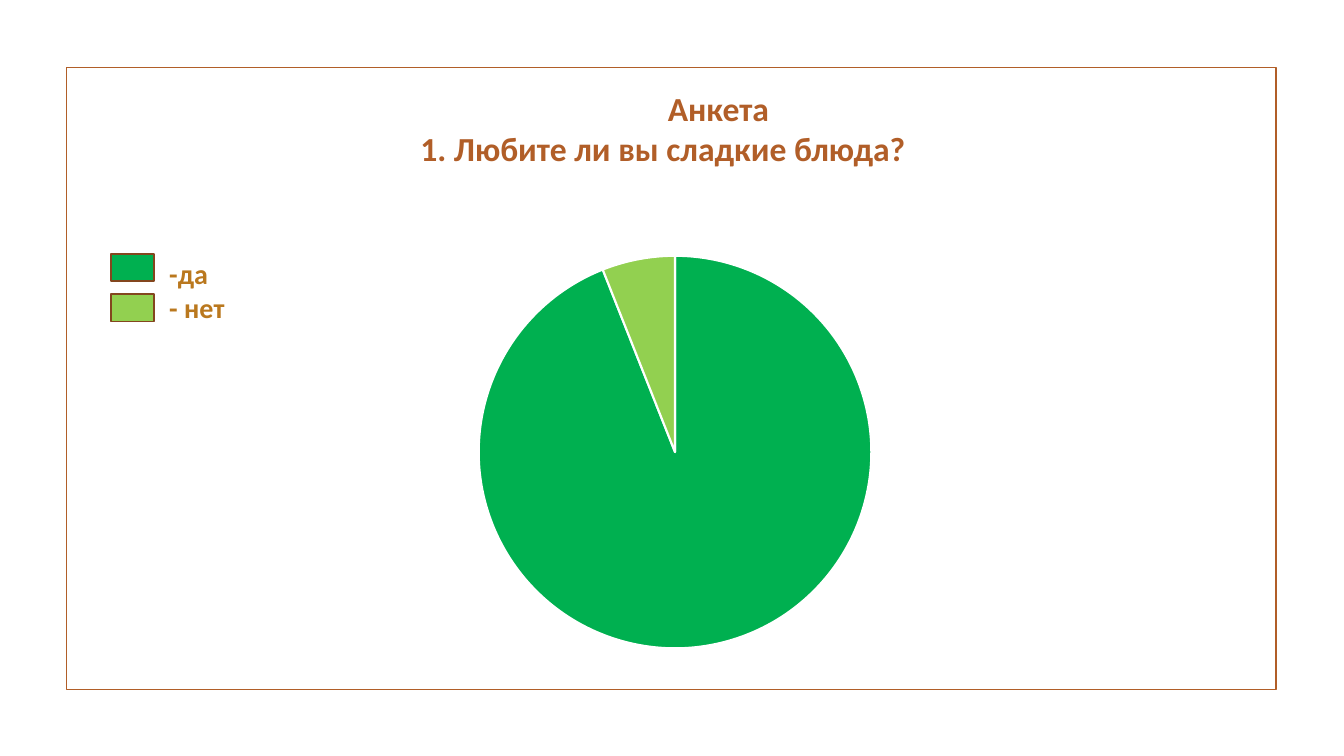
from pptx import Presentation
from pptx.chart.data import CategoryChartData
from pptx.dml.color import RGBColor
from pptx.enum.chart import XL_CHART_TYPE
from pptx.enum.shapes import MSO_SHAPE
from pptx.enum.text import PP_ALIGN
from pptx.util import Inches, Pt

PIE = XL_CHART_TYPE.PIE
RECTANGLE = MSO_SHAPE.RECTANGLE
LEFT, CENTER = PP_ALIGN.LEFT, PP_ALIGN.CENTER

FONT = "Calibri"
COLORS = {
    "frame": "B15E28",
    "swatch_line": "83461E",
    "legend": "BA781E",
    "yes": "00B050",
    "no": "92D050",
    "white": "FFFFFF",
    "black": "000000",
}


def add_rectangle(left, top, width, height, line, fill=None):
    rectangle = slide.shapes.add_shape(
        RECTANGLE, Inches(left), Inches(top), Inches(width), Inches(height))
    rectangle.shadow.inherit = False
    if fill:
        rectangle.fill.solid()
        rectangle.fill.fore_color.rgb = RGBColor.from_string(COLORS[fill])
    else:
        rectangle.fill.background()
    rectangle.line.color.rgb = RGBColor.from_string(COLORS[line])
    rectangle.line.width = Pt(1.25)


def add_text(lines, left, top, width, height, size, color):
    """Add a bold text box; lines holds (text, alignment, left indent in inches)."""
    frame = slide.shapes.add_textbox(
        Inches(left), Inches(top), Inches(width), Inches(height)).text_frame
    frame.word_wrap = True
    for number, (text, alignment, indent) in enumerate(lines):
        paragraph = frame.add_paragraph() if number else frame.paragraphs[0]
        paragraph.alignment = alignment
        if indent:
            paragraph._p.get_or_add_pPr().set("marL", str(Inches(indent)))
        run = paragraph.add_run()
        run.text = text
        run.font.name = FONT
        run.font.size = Pt(size)
        run.font.bold = True
        run.font.color.rgb = RGBColor.from_string(COLORS[color])


prs = Presentation()
prs.slide_width, prs.slide_height = Inches(13.33), Inches(7.5)
slide = prs.slides.add_slide(prs.slide_layouts[6])

add_rectangle(0.66, 0.67, 12, 6.17, line="frame")

# Pie of the answers
answers = CategoryChartData()
answers.categories = ["1", "2"]
answers.add_series("Series 1", (94, 6))
pie = slide.shapes.add_chart(
    PIE, Inches(2.84), Inches(2.4), Inches(7.71), Inches(4.17), answers).chart
pie.has_title = False
pie.has_legend = False
pie.font.name = FONT
pie.font.size = Pt(10)
pie.font.color.rgb = RGBColor.from_string(COLORS["black"])
pie.plots[0].vary_by_categories = True
for index, answer in enumerate(("yes", "no")):
    slice_format = pie.plots[0].series[0].points[index].format
    slice_format.fill.solid()
    slice_format.fill.fore_color.rgb = RGBColor.from_string(COLORS[answer])
    slice_format.line.color.rgb = RGBColor.from_string(COLORS["white"])
    slice_format.line.width = Pt(1.5)

# Question
add_text([("Анкета", CENTER, 0), ("1. Любите ли вы сладкие блюда?", LEFT, 2.49)],
         1.58, 0.82, 11.09, 0.91, size=24, color="frame")

# Legend
for row, answer in enumerate(("yes", "no")):
    add_rectangle(1.1, 2.52 + 0.4 * row, 0.43, 0.27, line="swatch_line", fill=answer)
add_text([("-да", LEFT, 0), ("- нет", LEFT, 0)],
         1.58, 2.5, 1.42, 0.77, size=20, color="legend")

prs.save("out.pptx")
